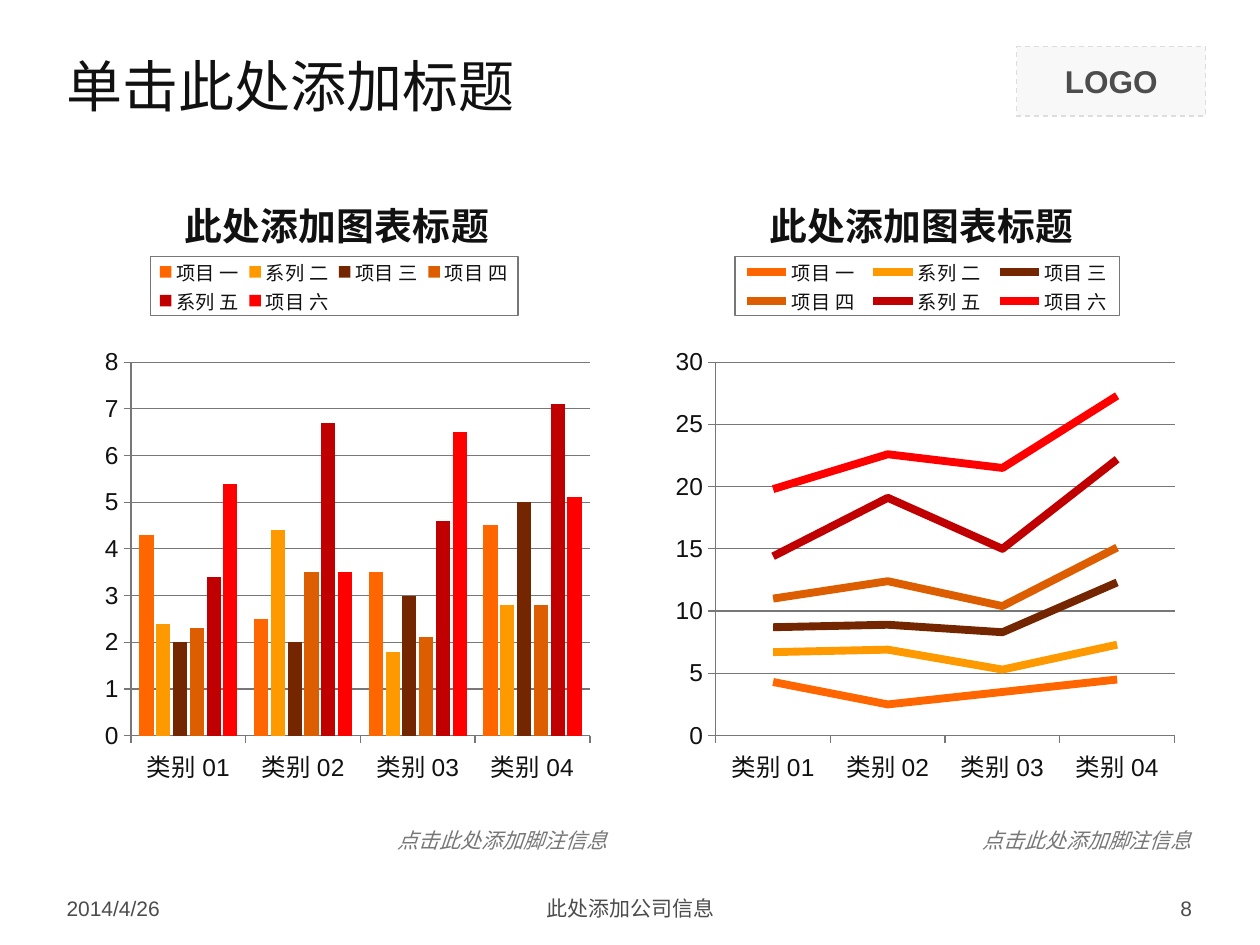
import pptx
import pptx.chart.data
import pptx.dml.color
import pptx.enum.chart
import pptx.enum.dml
import pptx.enum.shapes
import pptx.enum.text
import pptx.oxml
import pptx.oxml.ns
import pptx.util

Inches = pptx.util.Inches
Pt = pptx.util.Pt
RGBColor = pptx.dml.color.RGBColor
ALIGN = pptx.enum.text.PP_ALIGN
MIDDLE = pptx.enum.text.MSO_ANCHOR.MIDDLE
CHART_TYPE = pptx.enum.chart.XL_CHART_TYPE
qn = pptx.oxml.ns.qn

INK = RGBColor(0x11, 0x11, 0x11)
GRAY = RGBColor(0x77, 0x77, 0x77)
FOOTER_GRAY = RGBColor(0x4C, 0x4C, 0x4C)
LOGO_TEXT = RGBColor(0x4D, 0x4D, 0x4D)
LOGO_FILL = RGBColor(0xF8, 0xF8, 0xF8)
LOGO_LINE = RGBColor(0xDD, 0xDD, 0xDD)

CATEGORIES = ["类别 01", "类别 02", "类别 03", "类别 04"]
SERIES = [
    ("项目 一", (4.3, 2.5, 3.5, 4.5), RGBColor(0xFF, 0x66, 0x00)),
    ("系列 二", (2.4, 4.4, 1.8, 2.8), RGBColor(0xFF, 0x99, 0x00)),
    ("项目 三", (2, 2, 3, 5), RGBColor(0x74, 0x26, 0x00)),
    ("项目 四", (2.3, 3.5, 2.1, 2.8), RGBColor(0xDC, 0x5E, 0x01)),
    ("系列 五", (3.4, 6.7, 4.6, 7.1), RGBColor(0xC0, 0x00, 0x00)),
    ("项目 六", (5.4, 3.5, 6.5, 5.1), RGBColor(0xFF, 0x00, 0x00)),
]


def set_layout(parent, index, values, edge, inner=False):
    """Place a chart part by fractions of the chart's size."""
    for old in parent.findall(qn("c:layout")):
        parent.remove(old)
    target = '<c:layoutTarget val="inner"/>' if inner else ""
    modes = "".join(f'<c:{axis}Mode val="{edge}"/>' for axis in "xy")
    sizes = "".join(f'<c:{key} val="{value}"/>' for key, value in zip("xywh", values))
    parent.insert(index, pptx.oxml.parse_xml(
        f'<c:layout {pptx.oxml.ns.nsdecls("c")}><c:manualLayout>'
        f"{target}{modes}{sizes}</c:manualLayout></c:layout>"))


class SlideBuilder:
    body_font = "Arial"
    title_font = "Montserrat"

    def __init__(self, slide):
        self.slide = slide

    def style(self, font, size, color, bold=False, italic=False, name=None):
        font.name = name or self.body_font
        font.size = Pt(size)
        font.color.rgb = color
        font.bold = bold
        font.italic = italic

    def title(self, text, left, top, width, height):
        shape = self.slide.shapes.title
        shape.left, shape.top = Inches(left), Inches(top)
        shape.width, shape.height = Inches(width), Inches(height)
        shape.text_frame.text = text
        shape.text_frame.vertical_anchor = MIDDLE
        paragraph = shape.text_frame.paragraphs[0]
        paragraph.alignment = ALIGN.LEFT
        self.style(paragraph.font, 32, INK, name=self.title_font)

    def logo_box(self, text, left, top, width, height):
        shape = self.slide.shapes.add_shape(
            pptx.enum.shapes.MSO_SHAPE.RECTANGLE,
            Inches(left), Inches(top), Inches(width), Inches(height))
        shape.shadow.inherit = False
        shape.fill.solid()
        shape.fill.fore_color.rgb = LOGO_FILL
        shape.line.color.rgb = LOGO_LINE
        shape.line.width = Pt(0.75)
        shape.line.dash_style = pptx.enum.dml.MSO_LINE.DASH
        shape.text_frame.text = text
        shape.text_frame.vertical_anchor = MIDDLE
        paragraph = shape.text_frame.paragraphs[0]
        paragraph.alignment = ALIGN.CENTER
        self.style(paragraph.font, 18, LOGO_TEXT, bold=True)

    def text(self, text, left, top, width, height, align, color=FOOTER_GRAY):
        shape = self.slide.shapes.add_textbox(
            Inches(left), Inches(top), Inches(width), Inches(height))
        frame = shape.text_frame
        frame.word_wrap = True
        frame.vertical_anchor = MIDDLE
        frame.text = text
        frame.paragraphs[0].alignment = align
        self.style(frame.paragraphs[0].font, 12, color)
        return shape

    def footnote(self, text, left, top, width, height):
        frame = self.text(text, left, top, width, height, ALIGN.RIGHT, GRAY).text_frame
        frame.word_wrap = False
        frame.auto_size = pptx.enum.text.MSO_AUTO_SIZE.SHAPE_TO_FIT_TEXT
        frame.vertical_anchor = pptx.enum.text.MSO_ANCHOR.TOP
        frame.paragraphs[0].font.italic = True

    def axis(self, axis):
        axis.major_tick_mark = pptx.enum.chart.XL_TICK_MARK.OUTSIDE
        axis.minor_tick_mark = pptx.enum.chart.XL_TICK_MARK.NONE
        self.style(axis.tick_labels.font, 14, INK)
        self.hairline(axis.format.line)

    def hairline(self, line):
        line.color.rgb = GRAY
        line.width = Pt(0.75)

    def legend(self, chart, width):
        chart.has_legend = True
        legend = chart.legend
        legend.position = pptx.enum.chart.XL_LEGEND_POSITION.TOP
        legend.include_in_layout = False
        self.style(legend.font, 11, INK)
        element = legend._element
        set_layout(element, 1, (0.17, 0.14, width, 0.09), "edge")
        element.find(qn("c:overlay")).addnext(pptx.oxml.parse_xml(
            f'<c:spPr {pptx.oxml.ns.nsdecls("c", "a")}><a:noFill/><a:ln w="9525">'
            f'<a:solidFill><a:srgbClr val="{GRAY}"/></a:solidFill></a:ln></c:spPr>'))

    def chart(self, kind, title, left, top, width, height, maximum, step, legend_width):
        data = pptx.chart.data.CategoryChartData()
        data.categories = CATEGORIES
        for name, values, _ in SERIES:
            data.add_series(name, values)
        chart = self.slide.shapes.add_chart(
            kind, Inches(left), Inches(top), Inches(width), Inches(height), data).chart
        self.style(chart.font, 18, INK)

        chart.has_title = True
        chart.chart_title.include_in_layout = False
        chart.chart_title.text_frame.text = title
        self.style(chart.chart_title.text_frame.paragraphs[0].font, 21.6, INK, bold=True)
        self.legend(chart, legend_width)

        self.axis(chart.category_axis)
        value_axis = chart.value_axis
        self.axis(value_axis)
        value_axis.minimum_scale, value_axis.maximum_scale = 0, maximum
        value_axis.major_unit = step
        value_axis.has_major_gridlines = True
        self.hairline(value_axis.major_gridlines.format.line)
        plot_area = chart._chartSpace.chart.plotArea
        set_layout(plot_area, 0, (0.136, 0.301, 0.811, 0.57), "edge", inner=True)

        plot = chart.plots[0]
        plot.vary_by_categories = False
        is_column = kind == CHART_TYPE.COLUMN_CLUSTERED
        if is_column:
            plot.gap_width, plot.overlap = 117, -18
        for series, (_, _, color) in zip(plot.series, SERIES):
            if is_column:
                series.format.fill.solid()
                series.format.fill.fore_color.rgb = color
            else:
                series.smooth = False
                series.format.line.color.rgb = color
                series.format.line.width = Pt(4.5)


def main():
    presentation = pptx.Presentation()
    presentation.slide_width, presentation.slide_height = Inches(10), Inches(7.5)
    slide = presentation.slides.add_slide(presentation.slide_layouts[5])
    builder = SlideBuilder(slide)

    # Header
    builder.title("单击此处添加标题", 0.43, 0.28, 9.14, 0.79)
    builder.logo_box("LOGO", 8.07, 0.37, 1.5, 0.55)

    # Charts, each with a footnote aligned to its right edge
    chart_width, note_width = 4.49, 1.88
    for left, kind, maximum, step, legend_width in (
        (0.43, CHART_TYPE.COLUMN_CLUSTERED, 8, 1, 0.65),
        (5.07, CHART_TYPE.LINE_STACKED, 30, 5, 0.68),
    ):
        builder.chart(kind, "此处添加图表标题", left, 1.31, chart_width, 5.2,
                      maximum, step, legend_width)
        builder.footnote("点击此处添加脚注信息", left + chart_width - note_width,
                         6.52, note_width, 0.3)

    # Footer
    for text, left, width, align in (
        ("2014/4/26", 0.43, 2.33, ALIGN.LEFT),
        ("此处添加公司信息", 3.42, 3.17, ALIGN.CENTER),
        ("8", 7.23, 2.33, ALIGN.RIGHT),
    ):
        builder.text(text, left, 7.06, width, 0.29, align)

    presentation.save("out.pptx")


if __name__ == "__main__":
    main()
